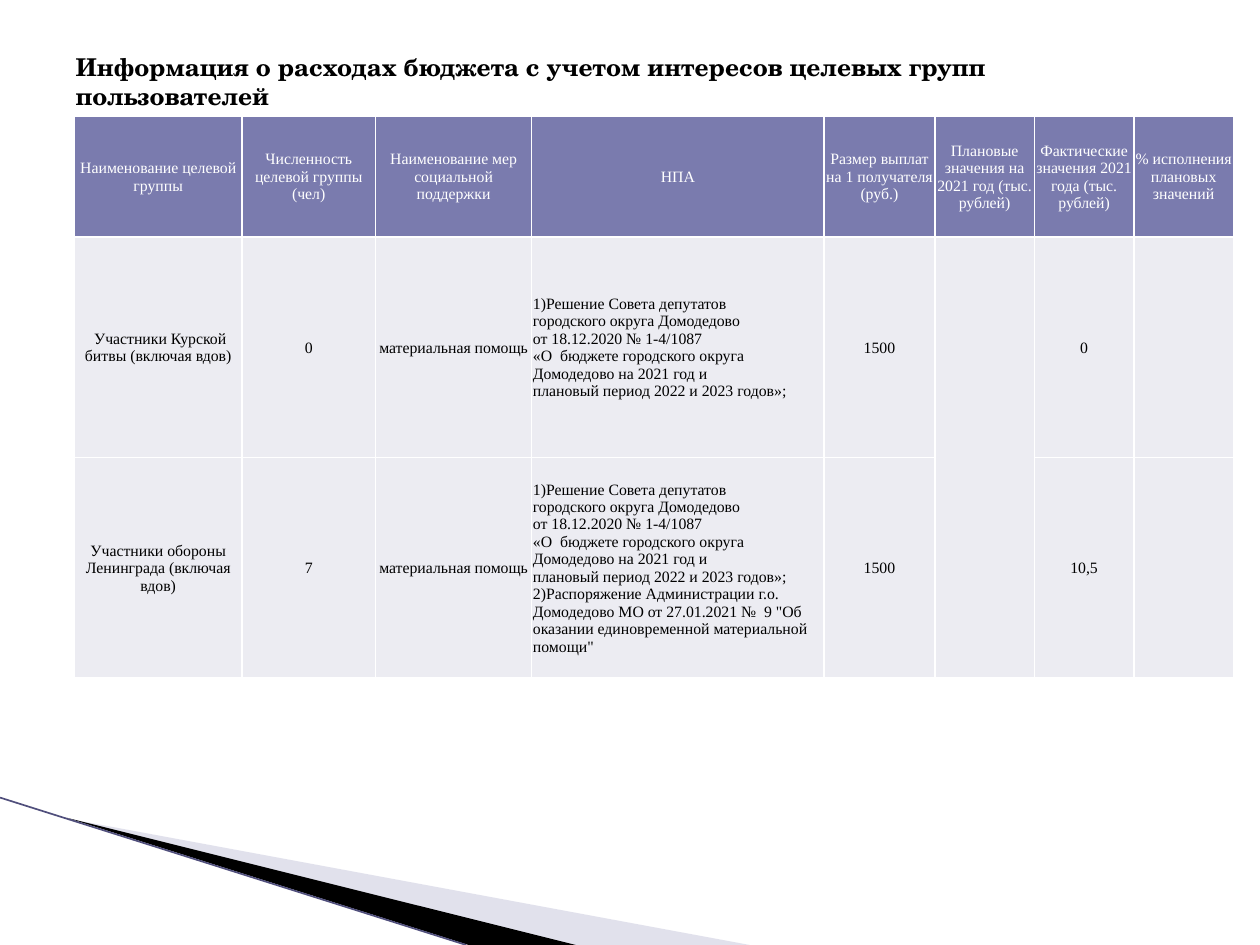
from lxml.etree import SubElement
from pptx import Presentation
from pptx.dml.color import RGBColor
from pptx.enum.shapes import MSO_CONNECTOR
from pptx.enum.text import MSO_ANCHOR, MSO_AUTO_SIZE, PP_ALIGN
from pptx.oxml.ns import qn
from pptx.util import Inches, Pt

COLORS = {
    "header": "7A7BAE", "body": "ECECF2", "white": "FFFFFF", "black": "000000",
    "wedge": "B6B6D1", "edge": "504F7C",
}
TITLE_FONT = "TeX Gyre Schola"
TABLE_FONT = "Times New Roman"
COLUMN_WIDTHS = [1.33, 1.06, 1.24, 2.32, 0.88, 0.79, 0.79, 0.79]
ROW_HEIGHTS = [0.96, 1.75, 1.75]
ACT_COLUMN = 3
PLAN_COLUMN = 5

BUDGET_ACT = [
    "1)Решение Совета депутатов",
    "городского округа Домодедово",
    "от 18.12.2020 № 1-4/1087",
    "«О  бюджете городского округа",
    "Домодедово на 2021 год и",
    "плановый период 2022 и 2023 годов»;",
]
AID_ORDER = (' 2)Распоряжение Администрации г.о. Домодедово МО от 27.01.2021 '
             '№  9 "Об оказании единовременной материальной помощи"')
ROWS = [
    ["Наименование целевой группы", "Численность целевой группы (чел)",
     "Наименование мер социальной поддержки", "НПА",
     "Размер выплат на 1 получателя (руб.)",
     "Плановые значения на 2021 год (тыс. рублей)",
     "Фактические значения 2021 года (тыс. рублей)",
     "% исполнения плановых значений"],
    [" Участники Курской битвы (включая вдов)", "0", "материальная помощь",
     BUDGET_ACT, "1500", "", "0", ""],
    ["Участники обороны Ленинграда (включая вдов)", "7", "материальная помощь",
     BUDGET_ACT[:-1] + [BUDGET_ACT[-1] + AID_ORDER], "1500", "", "10,5", ""],
]


def rgb(name):
    return RGBColor.from_string(COLORS[name])


class SlideBuilder:
    def __init__(self, presentation):
        self.slide = presentation.slides.add_slide(presentation.slide_layouts[5])

    def add_run(self, paragraph, text, font_name, size, color, bold=False):
        run = paragraph.add_run()
        run.text = text
        run.font.name = font_name
        run.font.size = Pt(size)
        run.font.bold = bold
        run.font.color.rgb = rgb(color)

    def wedge(self, points, color, opacity=100):
        builder = self.slide.shapes.build_freeform(
            Inches(points[0][0]), Inches(points[0][1]))
        builder.add_line_segments([(Inches(x), Inches(y)) for x, y in points[1:]])
        shape = builder.convert_to_shape()
        shape.shadow.inherit = False
        shape.fill.solid()
        shape.fill.fore_color.rgb = rgb(color)
        shape.line.fill.background()
        if opacity < 100:
            color_element = shape._element.spPr.find(qn("a:solidFill"))[0]
            SubElement(color_element, qn("a:alpha"), val=str(opacity * 1000))

    def line(self, start, end, color, width):
        connector = self.slide.shapes.add_connector(
            MSO_CONNECTOR.STRAIGHT, *[Inches(value) for value in start + end])
        connector.line.color.rgb = rgb(color)
        connector.line.width = Pt(width)
        SubElement(connector._element.spPr, qn("a:effectLst"))

    def title(self, text, left, top, width, height):
        shape = self.slide.shapes.title
        shape.left, shape.top = Inches(left), Inches(top)
        shape.width, shape.height = Inches(width), Inches(height)
        frame = shape.text_frame
        frame.word_wrap = True
        frame.auto_size = MSO_AUTO_SIZE.NONE
        frame.vertical_anchor = MSO_ANCHOR.MIDDLE
        paragraph = frame.paragraphs[0]
        paragraph.alignment = PP_ALIGN.LEFT
        self.add_run(paragraph, text, TITLE_FONT, 14, "black", bold=True)

    def cell(self, cell, content, fill, text_color, alignment):
        cell.margin_left = cell.margin_right = cell.margin_top = Inches(0.01)
        cell.margin_bottom = 0
        cell.vertical_anchor = MSO_ANCHOR.MIDDLE
        properties = cell._tc.get_or_add_tcPr()
        for side in ("lnL", "lnR", "lnT", "lnB"):
            border = SubElement(properties, qn(f"a:{side}"), w=str(Pt(1)))
            border_fill = SubElement(border, qn("a:solidFill"))
            SubElement(border_fill, qn("a:srgbClr"), val=COLORS["white"])
        cell.fill.solid()
        cell.fill.fore_color.rgb = rgb(fill)
        lines = content if isinstance(content, list) else [content]
        for index, text in enumerate(lines):
            frame = cell.text_frame
            paragraph = frame.add_paragraph() if index else frame.paragraphs[0]
            paragraph.alignment = alignment
            if text:
                self.add_run(paragraph, text, TABLE_FONT, 9, text_color)

    def table(self, rows, left, top):
        table = self.slide.shapes.add_table(
            len(rows), len(COLUMN_WIDTHS), Inches(left), Inches(top),
            Inches(sum(COLUMN_WIDTHS)), Inches(sum(ROW_HEIGHTS))).table
        for column, width in zip(table.columns, COLUMN_WIDTHS):
            column.width = Inches(width)
        for row, height in zip(table.rows, ROW_HEIGHTS):
            row.height = Inches(height)
        for row_index, row in enumerate(rows):
            fill, color = ("body", "black") if row_index else ("header", "white")
            for column_index, content in enumerate(row):
                is_act = row_index and column_index == ACT_COLUMN
                self.cell(table.cell(row_index, column_index), content, fill, color,
                          PP_ALIGN.LEFT if is_act else PP_ALIGN.CENTER)
        # One planned value spans both groups
        table.cell(1, PLAN_COLUMN).merge(table.cell(2, PLAN_COLUMN))


def main():
    presentation = Presentation()
    presentation.slide_width, presentation.slide_height = Inches(10), Inches(7.5)
    builder = SlideBuilder(presentation)

    # Corner decoration
    builder.wedge([(0.55, 6.5), (5.95, 7.5), (4.56, 7.5)], "wedge", opacity=40)
    builder.wedge([(0.53, 6.49), (4.57, 7.5), (3.72, 7.5)], "black")
    builder.line((0, 6.33), (3.7, 7.5), "edge", 0.95)

    # Heading and support table
    builder.title("Информация о расходах бюджета с учетом интересов целевых групп "
                  "пользователей", 0.5, 0.3, 9, 0.69)
    builder.table(ROWS, 0.59, 0.92)

    presentation.save("out.pptx")


if __name__ == "__main__":
    main()
